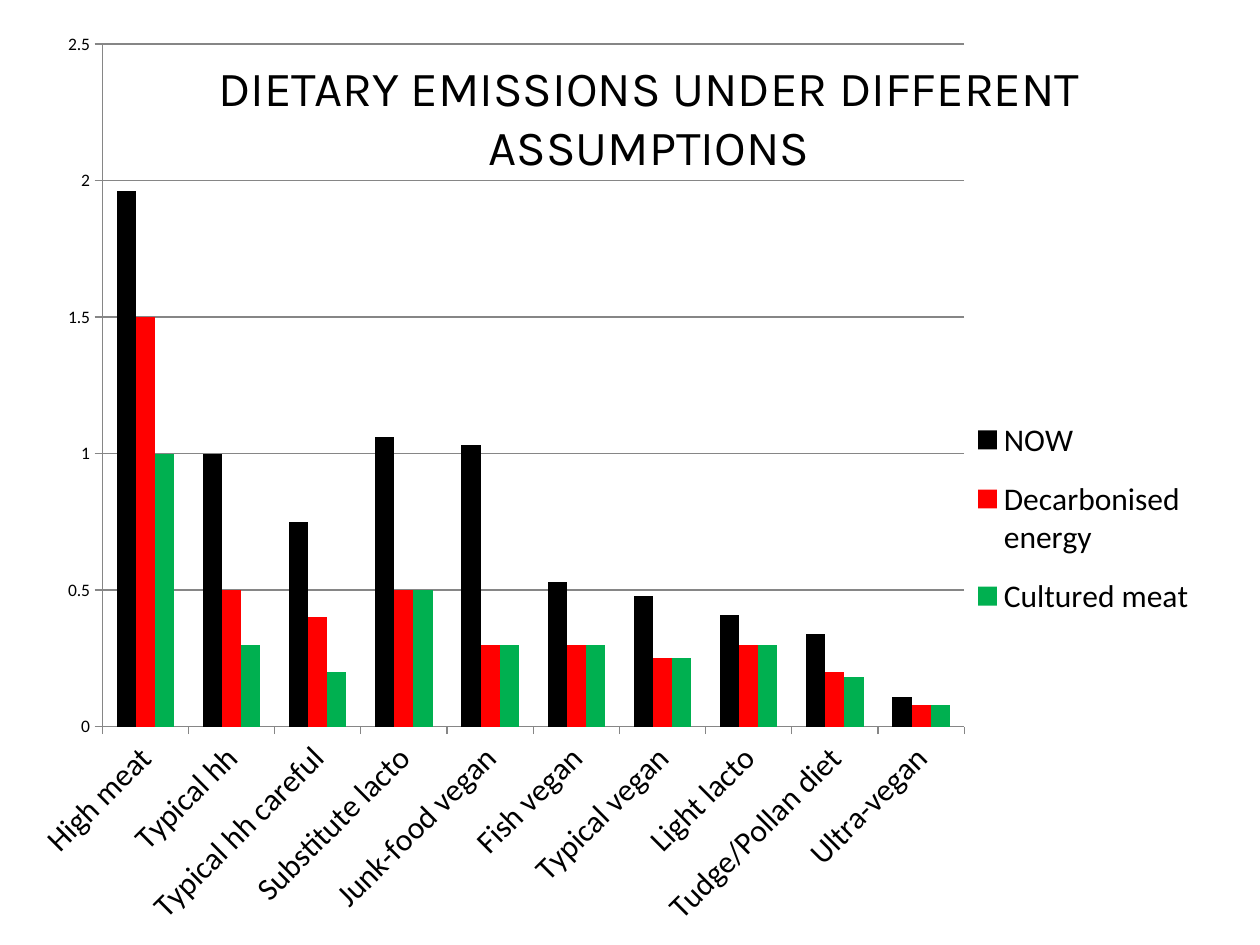
"""Build a slide charting dietary emissions under three assumptions."""
from dataclasses import dataclass

from lxml import etree
from pptx import Presentation
from pptx import util as u
from pptx.chart.data import CategoryChartData
from pptx.dml.color import RGBColor
from pptx.enum import chart as chart_enum
from pptx.enum import text
from pptx.oxml import ns

BLACK = RGBColor(0x00, 0x00, 0x00)
RED = RGBColor(0xFF, 0x00, 0x00)
GREEN = RGBColor(0x00, 0xB0, 0x50)
GREY = RGBColor(0x86, 0x86, 0x86)


@dataclass(frozen=True)
class Assumption:
    name: str
    color: RGBColor
    emissions: tuple[float, ...]


@dataclass(frozen=True)
class Box:
    left: float
    top: float
    width: float
    height: float


CHART = Box(0.3, 0.33, 24.51, 18.72)
PLOT = Box(1.76, 0.56, 17.38, 13.76)
LEGEND = Box(19.09, 7.73, 4.9, 4.77)
DIETS = (
    "High meat", "Typical hh", "Typical hh careful", "Substitute lacto",
    "Junk-food vegan", "Fish vegan", "Typical vegan", "Light lacto",
    "Tudge/Pollan diet", "Ultra-vegan",
)
ASSUMPTIONS = (
    Assumption("NOW", BLACK,
               (1.96, 1, 0.75, 1.06, 1.03, 0.53, 0.48, 0.41, 0.34, 0.11)),
    Assumption("Decarbonised energy", RED,
               (1.5, 0.5, 0.4, 0.5, 0.3, 0.3, 0.25, 0.3, 0.2, 0.08)),
    Assumption("Cultured meat", GREEN,
               (1, 0.3, 0.2, 0.5, 0.3, 0.3, 0.25, 0.3, 0.18, 0.08)),
)


def format_font(font, *, size: float, name: str = "Calibri",
                color: RGBColor = BLACK) -> None:
    font.size, font.name, font.bold = u.Pt(size), name, False
    font.color.rgb = color


def write_text(shape, content: str, *, alignment=text.PP_ALIGN.CENTER,
               anchor=text.MSO_ANCHOR.MIDDLE, **font_format) -> None:
    frame = shape.text_frame
    frame.word_wrap = True
    frame.auto_size = text.MSO_AUTO_SIZE.NONE
    frame.vertical_anchor = anchor
    paragraph = frame.paragraphs[0]
    paragraph.alignment = alignment
    run = paragraph.add_run()
    run.text = content
    format_font(run.font, **font_format)


def set_layout(parent, position: int, box: Box, *, inner: bool = False) -> None:
    for old in parent.findall(ns.qn("c:layout")):
        parent.remove(old)
    layout = etree.Element(ns.qn("c:layout"))
    manual = etree.SubElement(layout, ns.qn("c:manualLayout"))
    settings = {"layoutTarget": "inner"} if inner else {}
    settings |= {
        "xMode": "edge", "yMode": "edge",
        "x": box.left / CHART.width, "y": box.top / CHART.height,
        "w": box.width / CHART.width, "h": box.height / CHART.height,
    }
    for tag, value in settings.items():
        etree.SubElement(manual, ns.qn(f"c:{tag}")).set("val", str(value))
    parent.insert(position, layout)


def format_axis(axis, size: float) -> None:
    axis.major_tick_mark = chart_enum.XL_TICK_MARK.OUTSIDE
    axis.minor_tick_mark = chart_enum.XL_TICK_MARK.NONE
    axis.format.line.color.rgb = GREY
    axis.format.line.width = u.Pt(0.75)
    format_font(axis.tick_labels.font, size=size)


def add_emissions_chart(slide) -> None:
    data = CategoryChartData()
    data.categories = DIETS
    for assumption in ASSUMPTIONS:
        data.add_series(assumption.name, assumption.emissions)
    chart = slide.shapes.add_chart(
        chart_enum.XL_CHART_TYPE.COLUMN_CLUSTERED,
        u.Cm(CHART.left), u.Cm(CHART.top),
        u.Cm(CHART.width), u.Cm(CHART.height), data).chart
    chart.has_title = False
    format_font(chart.font, size=10)

    plot = chart.plots[0]
    plot.gap_width, plot.overlap = 150, 0
    plot.vary_by_categories = False
    for series, assumption in zip(plot.series, ASSUMPTIONS):
        series.format.fill.solid()
        series.format.fill.fore_color.rgb = assumption.color
        series.invert_if_negative = False

    format_axis(chart.category_axis, 18)
    labels = chart.category_axis._element.find(ns.qn("c:txPr"))
    labels.find(ns.qn("a:bodyPr")).set("rot", "-2700000")
    values = chart.value_axis
    format_axis(values, 10)
    values.minimum_scale, values.maximum_scale, values.major_unit = 0, 2.5, 0.5
    values.has_major_gridlines = True
    values.major_gridlines.format.line.color.rgb = GREY
    values.major_gridlines.format.line.width = u.Pt(0.75)

    chart.has_legend = True
    legend = chart.legend
    legend.position = chart_enum.XL_LEGEND_POSITION.RIGHT
    legend.include_in_layout = False
    format_font(legend.font, size=18)
    set_layout(legend._element, 1, LEGEND)
    set_layout(chart._chartSpace.chart.plotArea, 0, PLOT, inner=True)


def main() -> None:
    presentation = Presentation()
    presentation.slide_width = u.Cm(25.4)
    presentation.slide_height = u.Cm(19.05)
    slide = presentation.slides.add_slide(presentation.slide_layouts[5])
    title = slide.shapes.title
    title.left, title.top = u.Cm(1.27), u.Cm(0.76)
    title.width, title.height = u.Cm(23.62), u.Cm(3.18)
    write_text(title, "DIETARY EMISSIONS UNDER DIFFERENT ASSUMPTIONS",
               size=28, name="Karla")
    add_emissions_chart(slide)
    presentation.save("out.pptx")


if __name__ == "__main__":
    main()
